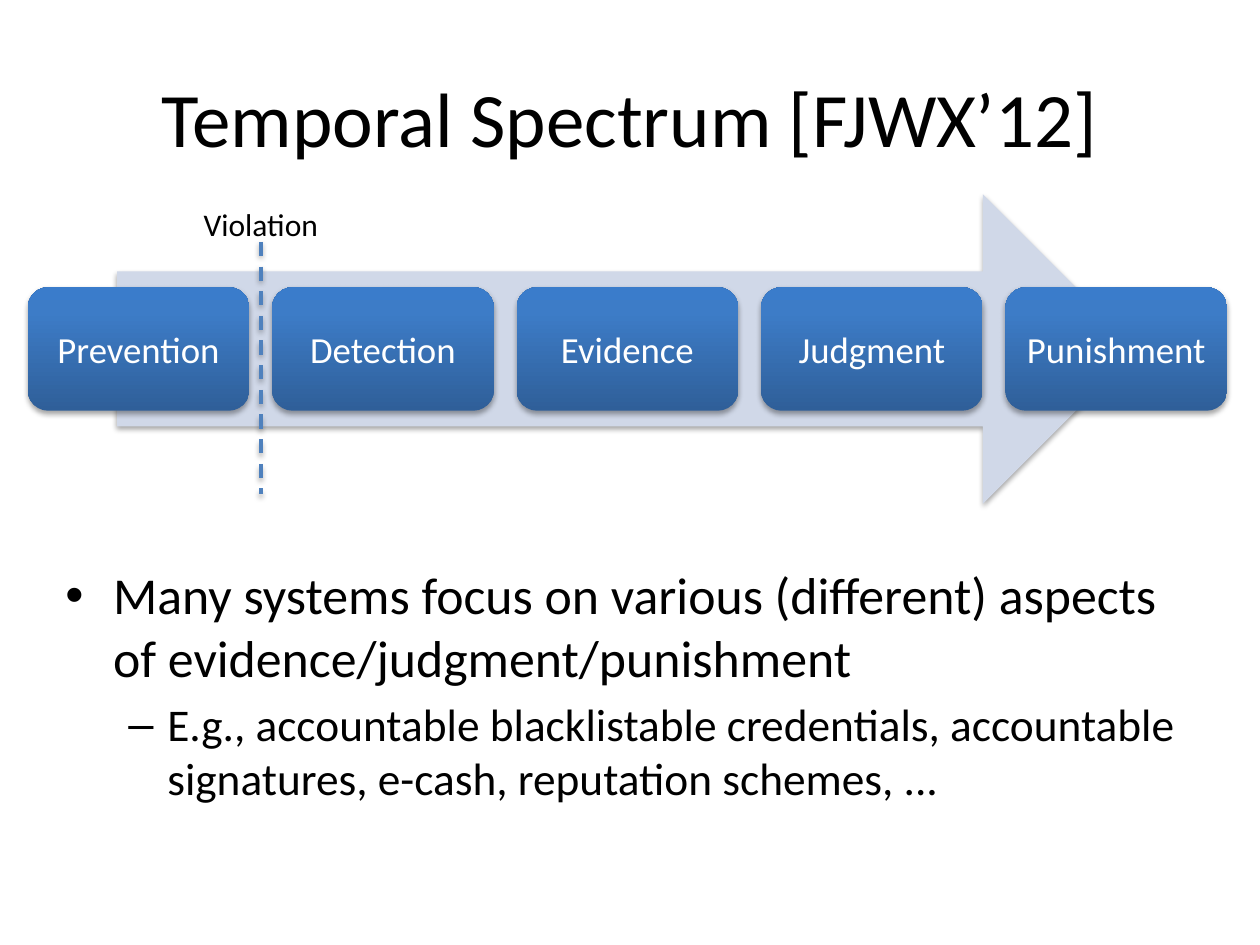
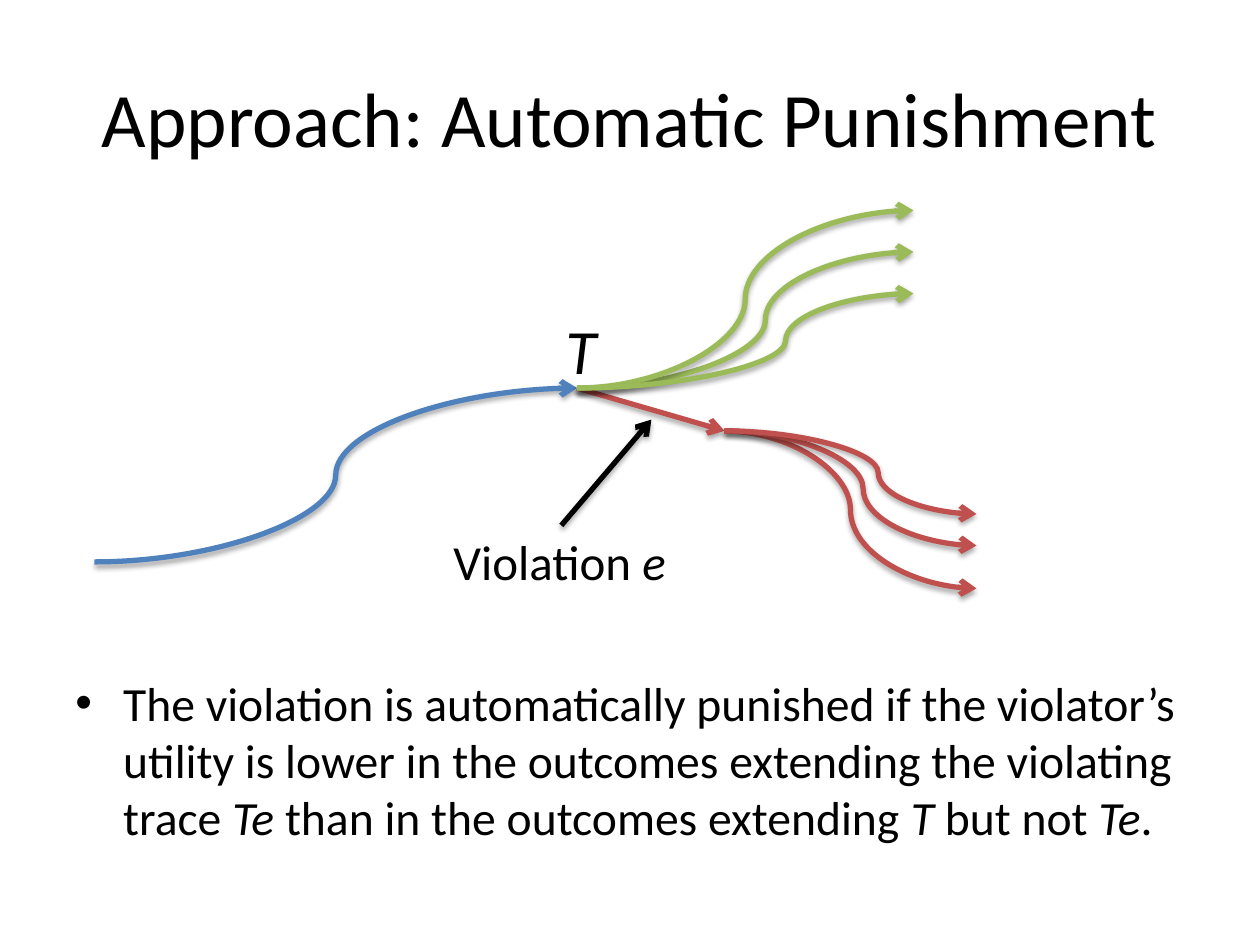
from collections import namedtuple

from lxml.etree import SubElement
from pptx import Presentation
from pptx.dml.color import RGBColor
from pptx.enum.dml import MSO_LINE
from pptx.enum.shapes import MSO_CONNECTOR as LINK, MSO_SHAPE as SHAPE
from pptx.enum.text import MSO_ANCHOR as ANCHOR, PP_ALIGN as ALIGN
from pptx.oxml import parse_xml
from pptx.oxml.ns import nsdecls, qn
from pptx.util import Inches, Pt

FONT = "Calibri"
BLACK = RGBColor(0x00, 0x00, 0x00)
WHITE = RGBColor(0xFF, 0xFF, 0xFF)
PALE_BLUE = RGBColor(0xD0, 0xD8, 0xE8)
BLUE = RGBColor(0x4F, 0x81, 0xBD)
RED = RGBColor(0xC0, 0x50, 0x4D)
GREEN = RGBColor(0x9B, 0xBB, 0x59)
CARD_STOPS = [
    (0, RGBColor(0x2F, 0x5F, 0x99)),
    (80, RGBColor(0x3D, 0x7C, 0xC7)),
    (100, RGBColor(0x3A, 0x7C, 0xCB)),
]
# Bullet sign, left margin and hanging indent for each level
BULLETS = [("•", 0.38, 0.38), ("–", 0.81, 0.31)]

Box = namedtuple("Box", "left top width height")
TITLE_BOX = Box(0.5, 0.3, 9, 1.25)


def inches(*lengths):
    return [Inches(length) for length in lengths]


# Text: *stars* enclose italic spans
def fill_text(frame, paragraphs, size, color=BLACK, align=ALIGN.LEFT,
              anchor=ANCHOR.TOP, wrap=True, bullets=False, sizes=None):
    frame.word_wrap = wrap
    frame.vertical_anchor = anchor
    for level, text in enumerate(paragraphs):
        para = frame.add_paragraph() if level else frame.paragraphs[0]
        para.alignment = align
        if bullets:
            add_bullet(para, level)
        para.font.size = Pt(sizes[level] if sizes else size)
        if level:
            para.space_before = Pt(5)
        for index, piece in enumerate(text.split("*")):
            if piece:
                span = para.add_run()
                span.text = piece
                span.font.name = FONT
                span.font.size = para.font.size
                span.font.color.rgb = color
                span.font.italic = index % 2 == 1


def add_bullet(para, level):
    sign, margin, hanging = BULLETS[level]
    props = para._p.get_or_add_pPr()
    props.set("marL", str(Inches(margin)))
    props.set("indent", str(-Inches(hanging)))
    para.level = level
    SubElement(props, qn("a:buFont"), typeface="Arial")
    SubElement(props, qn("a:buChar"), char=sign)


def add_text(page, box, paragraphs, size=18, **text_format):
    label = page.shapes.add_textbox(*inches(*box))
    fill_text(label.text_frame, paragraphs, size, **text_format)
    return label


def add_title(page, text):
    add_text(page, TITLE_BOX, [text], 44, align=ALIGN.CENTER, anchor=ANCHOR.MIDDLE)


# Soft shadow straight below; call it after fill and line are set
def cast_shadow(shape):
    effects = SubElement(shape._element.spPr, qn("a:effectLst"))
    shadow = SubElement(effects, qn("a:outerShdw"), blurRad=str(Pt(3.1)),
                        dist=str(Pt(1.8)), dir="5400000", rotWithShape="0")
    tint = SubElement(shadow, qn("a:srgbClr"), val=str(BLACK))
    SubElement(tint, qn("a:alpha"), val="35000")


def add_line(page, start, end, color, width=3, kind=LINK.STRAIGHT,
             arrow=True, dash=None, bend=None):
    line = page.shapes.add_connector(kind, *inches(*start, *end))
    line.line.color.rgb = color
    line.line.width = Pt(width)
    if dash:
        line.line.dash_style = dash
    props = line._element.spPr
    if arrow:
        SubElement(props.get_or_add_ln(), qn("a:tailEnd"), type="arrow")
    if bend is not None:
        guides = props.find(".//" + qn("a:avLst"))
        SubElement(guides, qn("a:gd"), name="adj1", fmla=f"val {round(bend * 100000)}")
    cast_shadow(line)
    return line


def add_card(page, box, text):
    card = page.shapes.add_shape(SHAPE.ROUNDED_RECTANGLE, *inches(*box))
    card.line.fill.background()
    stops = "".join(
        f'<a:gs pos="{place * 1000}"><a:srgbClr val="{color}"/></a:gs>'
        for place, color in CARD_STOPS)
    gradient = parse_xml(
        f'<a:gradFill {nsdecls("a")} rotWithShape="1"><a:gsLst>{stops}</a:gsLst>'
        '<a:lin ang="16200000" scaled="0"/></a:gradFill>')
    card._element.spPr.find(qn("a:prstGeom")).addnext(gradient)
    cast_shadow(card)
    fill_text(card.text_frame, [text], 21, color=WHITE,
              align=ALIGN.CENTER, anchor=ANCHOR.MIDDLE)


# Row of stages on a broad arrow, with the moment of violation marked
def add_spectrum(page, box, stages):
    card_width, card_height, arrow_width = 1.76, 0.98, 8.1
    gap = (box.width - len(stages) * card_width) / (len(stages) - 1)

    arrow = page.shapes.add_shape(
        SHAPE.RIGHT_ARROW,
        *inches(box.left + (box.width - arrow_width) / 2, box.top, arrow_width, box.height))
    arrow.fill.solid()
    arrow.fill.fore_color.rgb = PALE_BLUE
    arrow.line.fill.background()
    cast_shadow(arrow)

    card_top = box.top + (box.height - card_height) / 2
    for index, stage in enumerate(stages):
        left = box.left + index * (card_width + gap)
        add_card(page, Box(left, card_top, card_width, card_height), stage)

    violation_x = box.left + card_width + gap / 2
    add_line(page, (violation_x, box.top + 0.38), (violation_x, box.top + 2.38),
             BLUE, width=2, arrow=False, dash=MSO_LINE.DASH)
    label_width = 1.83
    add_text(page, Box(violation_x - label_width / 2, box.top + 0.04, label_width, 0.42),
             ["Violation"], 18, align=ALIGN.CENTER)


# Trace T that branches into good outcomes and punished ones
def add_trace_tree(page, box):
    def at(x, y):
        return box.left + x, box.top + y

    fork, violated = at(3.83, 1.41), at(5, 1.75)
    add_line(page, at(0, 2.79), fork, BLUE, kind=LINK.CURVE, bend=0.5)
    add_line(page, fork, violated, RED)
    branches = [
        (fork, GREEN, 6.5, [(0.33, 0.56), (0, 0.5), (0.66, 0.62)]),
        (violated, RED, box.width, [(3, 0.5), (2.66, 0.55), (2.41, 0.61)]),
    ]
    for start, color, end_x, outcomes in branches:
        for end_y, bend in outcomes:
            add_line(page, start, at(end_x, end_y), color, kind=LINK.CURVE, bend=bend)

    label = add_text(page, Box(*at(2.75, 2.5), 1.91, 0.57), ["Violation *e*"], 28, wrap=False)
    pointer = add_line(page, at(3.7, 2.5), at(4.42, 1.66), BLACK)
    pointer.begin_connect(label, 0)
    add_text(page, Box(*at(3.64, 0.75), 0.45, 0.71), ["*T*"], 36, wrap=False)


def build_spectrum_slide(page):
    add_title(page, "Temporal Spectrum [FJWX’12]")
    add_spectrum(page, Box(0.22, 1.54, 9.52, 2.46),
                 ["Prevention", "Detection", "Evidence", "Judgment", "Punishment"])
    add_text(page, Box(0.42, 4.42, 9.17, 2.2), [
        "Many systems focus on various (different) aspects of evidence/judgment/punishment",
        "E.g., accountable blacklistable credentials, accountable signatures, "
        "e-cash, reputation schemes, ...",
    ], bullets=True, sizes=[29.6, 25.9])


def build_punishment_slide(page):
    add_title(page, "Approach: Automatic Punishment")
    add_text(page, Box(0.5, 5.3, 9, 1.7), [
        "The violation is automatically punished if the violator’s utility is lower "
        "in the outcomes extending the violating trace *Te* than in the outcomes "
        "extending *T* but not *Te*.",
    ], 27.2, bullets=True)
    add_trace_tree(page, Box(0.75, 1.67, 7, 3))


def main():
    deck = Presentation()
    deck.slide_width, deck.slide_height = inches(10, 7.5)
    for build in (build_spectrum_slide, build_punishment_slide):
        build(deck.slides.add_slide(deck.slide_layouts[6]))
    deck.save("out.pptx")


if __name__ == "__main__":
    main()
